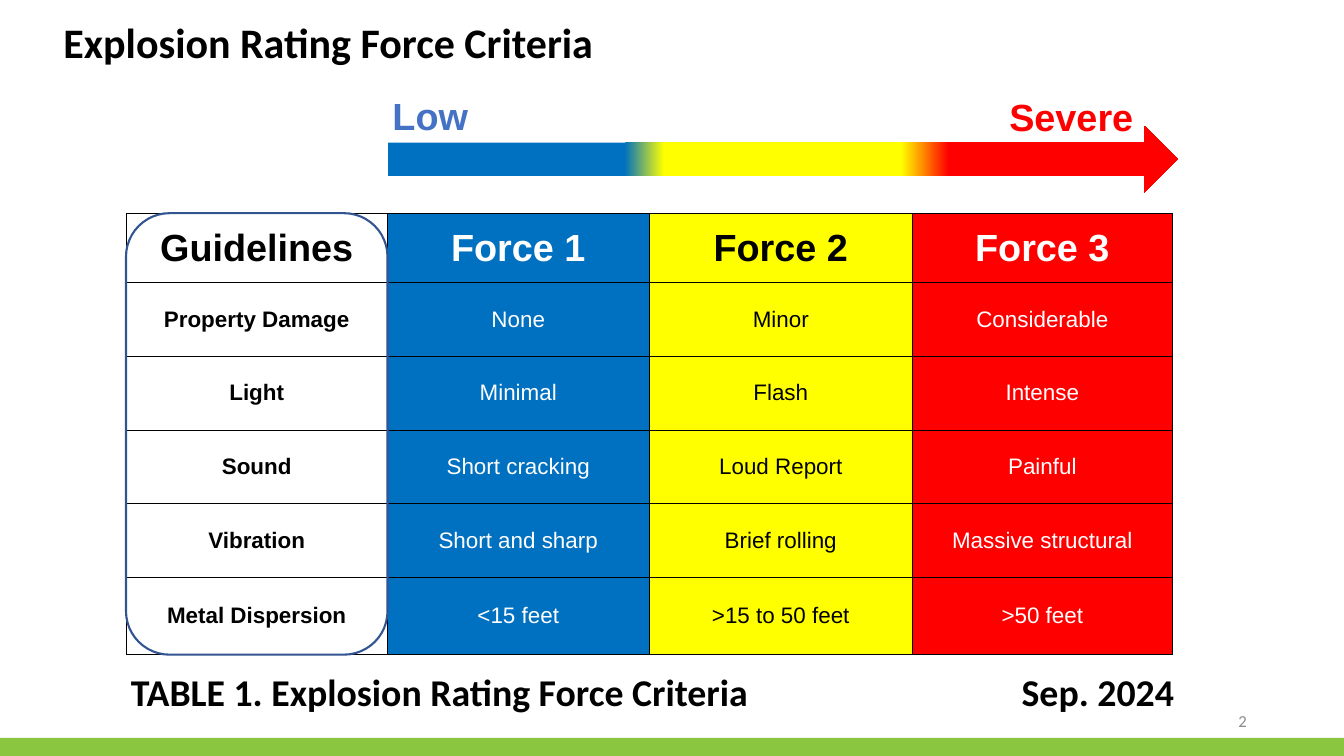
from copy import deepcopy

from lxml.etree import SubElement
from pptx import Presentation
from pptx.dml.color import RGBColor
from pptx.enum.shapes import MSO_SHAPE
from pptx.enum.text import MSO_ANCHOR, MSO_AUTO_SIZE, PP_ALIGN
from pptx.oxml.ns import qn
from pptx.util import Inches, Pt

TITLE = "Explosion Rating Force Criteria"
CAPTION = "TABLE 1. Explosion Rating Force Criteria"
DATE = "Sep. 2024"
PAGE_NUMBER = "2"
ROWS = [
    ("Guidelines", "Force 1", "Force 2", "Force 3"),
    ("Property Damage", "None", "Minor", "Considerable"),
    ("Light", "Minimal", "Flash", "Intense"),
    ("Sound", "Short cracking", "Loud Report", "Painful"),
    ("Vibration", "Short and sharp", "Brief rolling", "Massive structural"),
    ("Metal Dispersion", "<15 feet", ">15 to 50 feet", ">50 feet"),
]
BLACK, WHITE, BLUE, YELLOW, RED = "000000", "FFFFFF", "0070C0", "FFFF00", "FF0000"
COLUMNS = [(5.19, WHITE, BLACK), (5.19, BLUE, WHITE), (5.23, YELLOW, BLACK), (5.15, RED, WHITE)]
ROW_HEIGHTS = [1.38, 1.46, 1.46, 1.46, 1.46, 1.54]
SCALE_STOPS = [(0.30, BLUE), (0.35, YELLOW), (0.65, YELLOW), (0.71, RED)]
SCALE_LABELS = [("Low", 7.69, 1.79, 3.32, "4472C4"), ("Severe", 19.93, 1.8, 2.91, RED)]
TABLE_LEFT, TABLE_TOP = 2.5, 4.23


def color(hex_code):
    return RGBColor.from_string(hex_code)


def place(shape, left, top, width, height):
    shape.left, shape.top = Inches(left), Inches(top)
    shape.width, shape.height = Inches(width), Inches(height)


def write(frame, text, size, font, hex_code, bold=True, align=PP_ALIGN.LEFT):
    frame.word_wrap = True
    para = frame.paragraphs[0]
    para.alignment = align
    span = para.add_run()
    span.text = text
    span.font.size, span.font.name, span.font.bold = Pt(size), font, bold
    span.font.color.rgb = color(hex_code)
    return para


def add_text(page, area, *args, **kwargs):
    box = page.shapes.add_textbox(*map(Inches, area))
    return box, write(box.text_frame, *args, **kwargs)


def add_shape(page, kind, area):
    shape = page.shapes.add_shape(kind, *map(Inches, area))
    shape.shadow.inherit = False
    shape.line.fill.background()
    return shape


def add_borders(cell):
    properties = cell._tc.get_or_add_tcPr()
    for index, side in enumerate(("lnL", "lnR", "lnT", "lnB")):
        line = properties.makeelement(qn(f"a:{side}"), {"w": str(Pt(1))})
        fill = SubElement(line, qn("a:solidFill"))
        SubElement(fill, qn("a:srgbClr"), val=BLACK)
        properties.insert(index, line)


def add_rating_table(page, area):
    frame = page.shapes.add_table(len(ROWS), len(COLUMNS), *map(Inches, area))
    table = frame.table
    table.first_row = table.horz_banding = False
    for row, height in zip(table.rows, ROW_HEIGHTS):
        row.height = Inches(height)
    for column_index, (width, fill, ink) in enumerate(COLUMNS):
        table.columns[column_index].width = Inches(width)
        for row_index, texts in enumerate(ROWS):
            cell = table.cell(row_index, column_index)
            cell.fill.solid()
            cell.fill.fore_color.rgb = color(fill)
            cell.vertical_anchor = MSO_ANCHOR.MIDDLE
            cell.margin_left = cell.margin_right = Inches(0.12)
            cell.margin_top = cell.margin_bottom = Inches(0.04)
            header = row_index == 0
            write(cell.text_frame, texts[column_index], 54 if header else 32, "Arial", ink,
                  bold=header or column_index == 0, align=PP_ALIGN.CENTER)
            add_borders(cell)


def add_scale_arrow(page, area):
    arrow = add_shape(page, MSO_SHAPE.RIGHT_ARROW, area)
    arrow.fill.gradient()
    arrow.fill.gradient_angle = 0
    stop_list = arrow._element.spPr.find(".//" + qn("a:gsLst"))
    for stop in list(stop_list):
        stop_list.append(deepcopy(stop))
    for stop, (position, hex_code) in zip(arrow.fill.gradient_stops, SCALE_STOPS):
        stop.position = position
        stop.color.rgb = color(hex_code)


def main():
    deck = Presentation()
    deck.slide_width, deck.slide_height = Inches(26.67), Inches(15)
    page = deck.slides.add_slide(deck.slide_layouts[5])

    band = add_shape(page, MSO_SHAPE.RECTANGLE, (0, 14.64, 26.67, 0.36))
    band.fill.solid()
    band.fill.fore_color.rgb = color("8BC641")

    number, _ = add_text(page, (18.84, 13.9, 6, 0.8), PAGE_NUMBER, 24, "Calibri", "8C8C8C",
                         bold=False, align=PP_ALIGN.RIGHT)
    number.text_frame.vertical_anchor = MSO_ANCHOR.MIDDLE

    title = page.shapes.title
    place(title, 1.16, 0.4, 18.8, 1.39)
    title.text_frame.auto_size = MSO_AUTO_SIZE.NONE
    title.text_frame.vertical_anchor = MSO_ANCHOR.TOP
    write(title.text_frame, TITLE, 60, "Calibri", BLACK).line_spacing = 0.9

    _, caption = add_text(page, (TABLE_LEFT, 13.32, 22.18, 1.1), f"{CAPTION}\t{DATE}",
                          54, "Calibri", BLACK)
    caption.line_spacing = 0.9
    tabs = SubElement(caption._p.get_or_add_pPr(), qn("a:tabLst"))
    SubElement(tabs, qn("a:tab"), pos=str(Inches(20.7)), algn="r")

    table_height = sum(ROW_HEIGHTS)
    column_widths = [width for width, _, _ in COLUMNS]
    add_rating_table(page, (TABLE_LEFT, TABLE_TOP, sum(column_widths), table_height))

    outline = add_shape(page, MSO_SHAPE.ROUNDED_RECTANGLE,
                        (TABLE_LEFT, TABLE_TOP, column_widths[0], table_height))
    outline.fill.background()
    outline.line.color.rgb = color("325491")
    outline.line.width = Pt(3)

    add_scale_arrow(page, (TABLE_LEFT + column_widths[0], 2.5, 15.68, 1.32))
    for text, left, top, width, ink in SCALE_LABELS:
        add_text(page, (left, top, width, 1.01), text, 54, "Arial", ink)

    deck.save("out.pptx")


if __name__ == "__main__":
    main()
